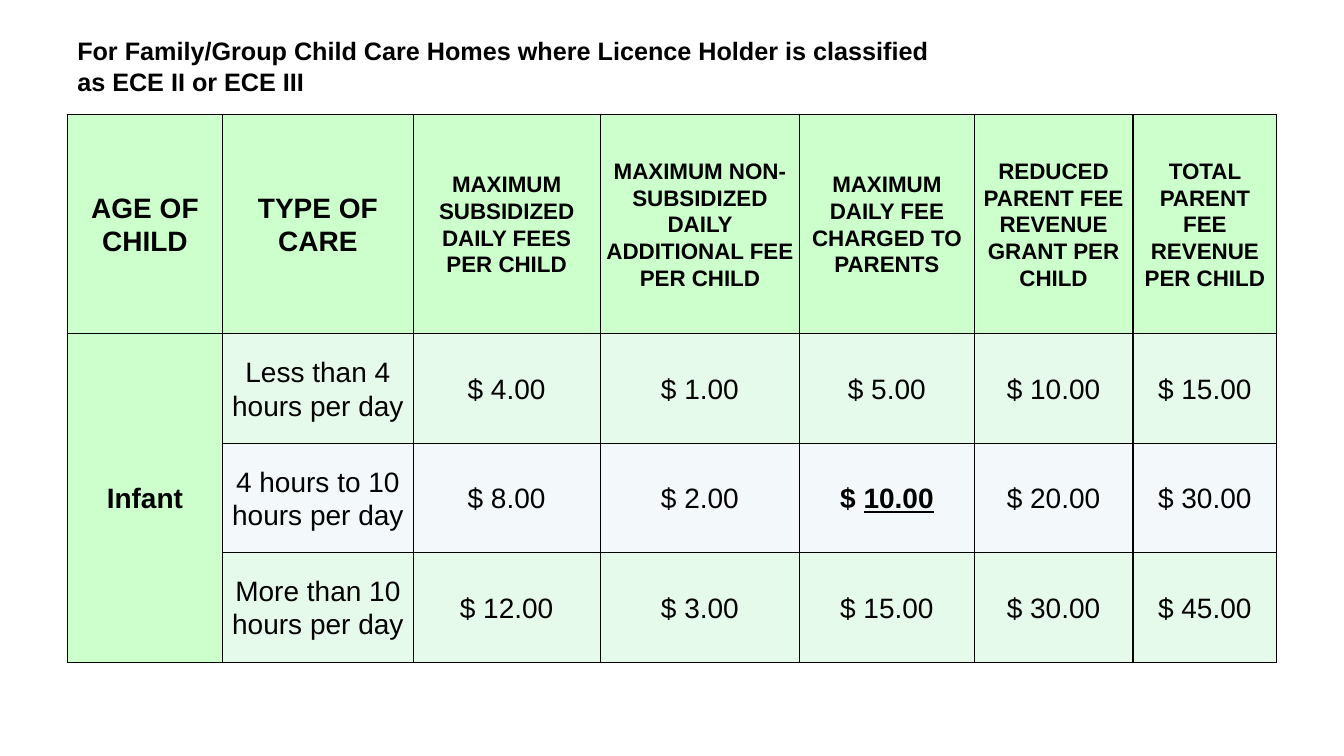
from dataclasses import dataclass
from lxml.etree import SubElement
from pptx import Presentation
from pptx.dml.color import RGBColor as Rgb
from pptx.enum.text import MSO_ANCHOR as Anchor, MSO_AUTO_SIZE as Auto, PP_ALIGN as Align
from pptx.oxml import parse_xml
from pptx.oxml.ns import nsdecls
from pptx.util import Pt


@dataclass(frozen=True)
class Theme:
    face: str = "Arial"
    ink: str = "000000"
    head: str = "CCFFCC"
    odd: str = "E6FAEB"
    even: str = "F3F9FA"
    title: int = 18
    label: int = 16
    body: int = 20
    rule: int = 1


THEME = Theme()
TITLE = "For Family/Group Child Care Homes where Licence Holder is classified as ECE II or ECE III"
HEADS = [
    "AGE OF CHILD", "TYPE OF CARE", "MAXIMUM SUBSIDIZED DAILY FEES PER CHILD",
    "MAXIMUM NON-SUBSIDIZED DAILY ADDITIONAL FEE PER CHILD",
    "MAXIMUM DAILY FEE CHARGED TO PARENTS",
    "REDUCED PARENT FEE REVENUE GRANT PER CHILD", "TOTAL PARENT FEE REVENUE PER CHILD",
]
FEES = [
    ["Infant", "Less than 4 hours per day", "$ 4.00", "$ 1.00", "$ 5.00", "$ 10.00", "$ 15.00"],
    ["", "4 hours to 10 hours per day", "$ 8.00", "$ 2.00", "$ 10.00", "$ 20.00", "$ 30.00"],
    ["", "More than 10 hours per day", "$ 12.00", "$ 3.00", "$ 15.00", "$ 30.00", "$ 45.00"],
]
WIDTHS = [111, 136, 133.5, 142.5, 124.5, 113.5, 102.5]
SHARES = [2, 1, 1, 1]
KEY = (2, 4)


def apply(item, form):
    for name, value in form.items():
        setattr(item, name, value)


def write(para, text, size, bold, line=False):
    run = para.add_run()
    run.text = text
    apply(run.font, {"name": THEME.face, "size": Pt(size), "bold": bold, "underline": line})
    run.font.color.rgb = Rgb.from_string(THEME.ink)


def edge(cell):
    props = cell._tc.get_or_add_tcPr()
    for spot, side in enumerate("LRTB"):
        line = parse_xml(f'<a:ln{side} {nsdecls("a")} w="{Pt(THEME.rule)}"><a:solidFill/></a:ln{side}>')
        SubElement(line[0], line[0].tag.replace("solidFill", "srgbClr"), val=THEME.ink)
        props.insert(spot, line)


def shade(cell, tint):
    cell.fill.solid()
    cell.fill.fore_color.rgb = Rgb.from_string(tint)
    edge(cell)


def heading(slide, left, top, width, height):
    shape = slide.shapes.title
    apply(shape, {"left": Pt(left), "top": Pt(top), "width": Pt(width), "height": Pt(height)})
    frame = shape.text_frame
    apply(frame, {
        "word_wrap": True, "auto_size": Auto.NONE, "vertical_anchor": Anchor.MIDDLE,
        "margin_left": Pt(7.2), "margin_right": Pt(7.2),
        "margin_top": Pt(3.6), "margin_bottom": Pt(24.5),
    })
    para = frame.paragraphs[0]
    para.alignment = Align.LEFT
    write(para, TITLE, THEME.title, True)


def fill(cell, row, col, text):
    top = row == 0
    tint = THEME.head if top or col == 0 else THEME.odd if row % 2 else THEME.even
    shade(cell, tint)
    apply(cell, {
        "vertical_anchor": Anchor.MIDDLE, "margin_left": Pt(4.5), "margin_right": Pt(4.5),
        "margin_top": 0, "margin_bottom": 0,
    })
    para = cell.text_frame.paragraphs[0]
    apply(para, {"alignment": Align.CENTER, "line_spacing": 1.07})
    if (row, col) == KEY:
        sign, sum_ = text.split()
        write(para, sign + " ", THEME.body, True)
        write(para, sum_, THEME.body, True, True)
    elif text:
        size = THEME.label if top and col > 1 else THEME.body
        write(para, text, size, top or col == 0)


def fees(slide, left, top, width, height):
    rows = [HEADS, *FEES]
    frame = slide.shapes.add_table(len(rows), len(HEADS), Pt(left), Pt(top), Pt(width), Pt(height))
    table = frame.table
    apply(table, {"first_row": False, "horz_banding": False})
    for col, size in zip(table.columns, WIDTHS):
        col.width = Pt(size * width / sum(WIDTHS))
    for row, share in zip(table.rows, SHARES):
        row.height = Pt(share * height / sum(SHARES))
    for row, texts in enumerate(rows):
        for col, text in enumerate(texts):
            fill(table.cell(row, col), row, col, text)
    table.cell(1, 0).merge(table.cell(len(FEES), 0))


def main():
    deck = Presentation()
    apply(deck, {"slide_width": Pt(960), "slide_height": Pt(540)})
    slide = deck.slides.add_slide(deck.slide_layouts[5])
    heading(slide, 48, 24, 632, 67)
    fees(slide, 48, 82, 864, 391)
    deck.save("out.pptx")


if __name__ == "__main__":
    main()
